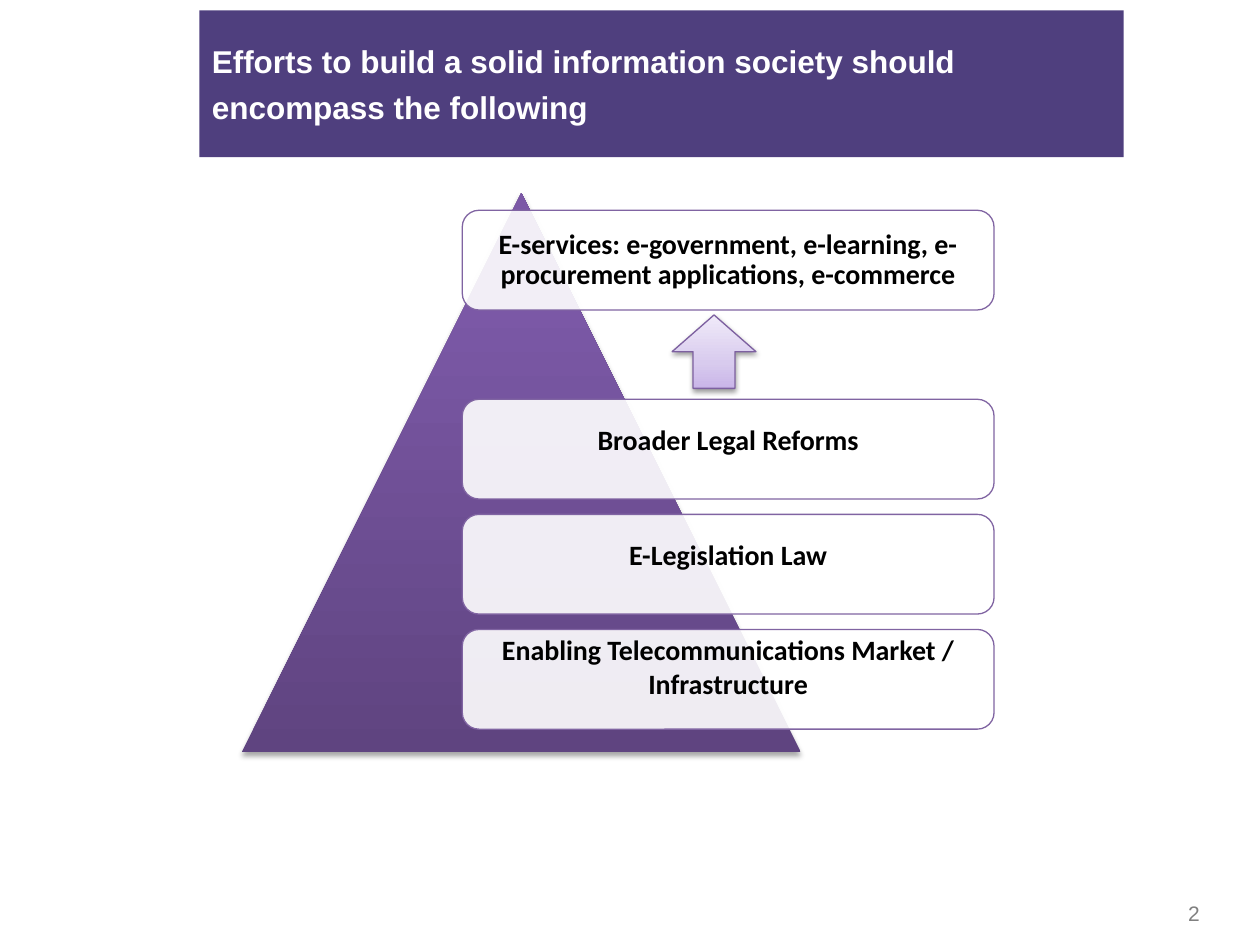
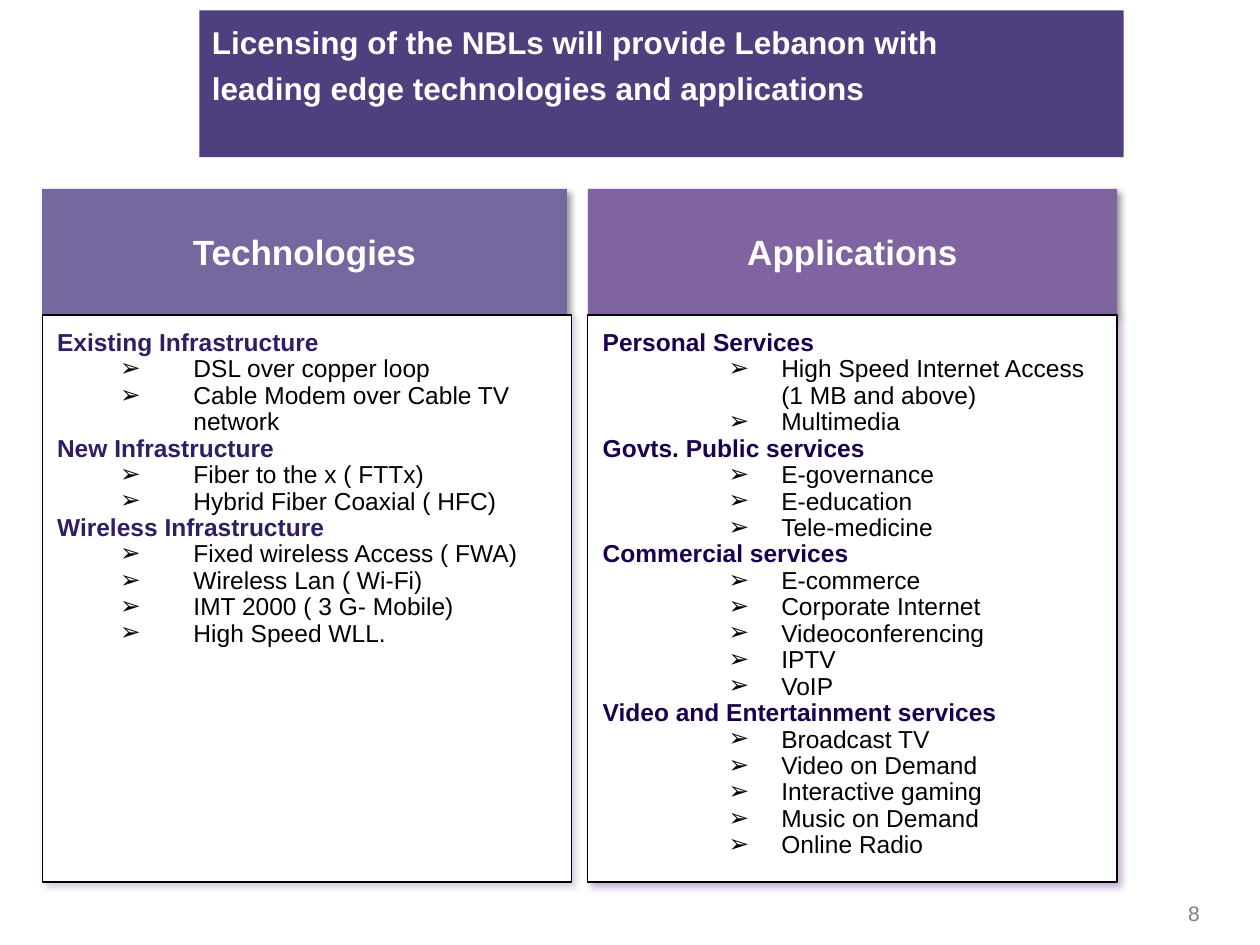
"""Build two slides on the foundations and services of an information society."""
from lxml import etree
from pptx import Presentation
from pptx.dml.color import RGBColor
from pptx.enum import shapes, text
from pptx.oxml import ns
from pptx.util import Cm, Pt

WHITE = RGBColor(0xFF, 0xFF, 0xFF)
BLACK = RGBColor(0, 0, 0)
GRAY = RGBColor(0x80, 0x80, 0x80)
BAND = RGBColor(0x4F, 0x3F, 0x7E)
VIOLET = RGBColor(0x80, 0x64, 0xA2)
ARROW_EDGE = RGBColor(0x7D, 0x60, 0xA0)
SLATE = RGBColor(0x75, 0x68, 0x9F)
SLATE_SHADOW = RGBColor(0x83, 0x81, 0xAD)
VIOLET_SHADOW = RGBColor(0x5F, 0x29, 0x87)
SLATE_HEADING = RGBColor(0x31, 0x1D, 0x63)
VIOLET_HEADING = RGBColor(0x1A, 0x00, 0x4E)
PYRAMID_STOPS = [
    (0, RGBColor(0x5F, 0x44, 0x80)),
    (80, RGBColor(0x7B, 0x58, 0xA6)),
    (100, RGBColor(0x7C, 0x57, 0xA8)),
]
ARROW_STOPS = [
    (0, RGBColor(0xC9, 0xB5, 0xE8)),
    (35, RGBColor(0xD8, 0xCB, 0xEE)),
    (100, RGBColor(0xF0, 0xEA, 0xF9)),
]

TECHNOLOGIES = [
    ("Existing Infrastructure",
     ["DSL over copper loop", "Cable Modem over Cable TV network"]),
    ("New Infrastructure",
     ["Fiber to the x ( FTTx)", "Hybrid Fiber Coaxial ( HFC)"]),
    ("Wireless Infrastructure",
     ["Fixed wireless Access ( FWA)", "Wireless Lan ( Wi-Fi)",
      "IMT 2000 ( 3 G- Mobile)", "High Speed WLL."]),
]
APPLICATIONS = [
    ("Personal Services",
     ["High Speed Internet Access (1 MB and above)", "Multimedia"]),
    ("Govts. Public services",
     ["E-governance", "E-education", "Tele-medicine"]),
    ("Commercial services",
     ["E-commerce", "Corporate Internet", "Videoconferencing", "IPTV", "VoIP"]),
    ("Video and Entertainment services",
     ["Broadcast TV", "Video on Demand", "Interactive gaming",
      "Music on Demand", "Online Radio"]),
]


def sub(parent, tag, **attrs):
    """Append a DrawingML child element and return it."""
    return etree.SubElement(parent, ns.qn(tag), {k: str(v) for k, v in attrs.items()})


def place(sp, left, top, width, height):
    """Position a shape, in centimetres."""
    sp.left, sp.top, sp.width, sp.height = Cm(left), Cm(top), Cm(width), Cm(height)


def paint(sp, fill=None, line=None):
    """Set a solid fill and a thin outline, without an inherited shadow."""
    sp.shadow.inherit = False
    if fill is not None:
        sp.fill.solid()
        sp.fill.fore_color.rgb = fill
    if line is None:
        sp.line.fill.background()
    else:
        sp.line.color.rgb = line
        sp.line.width = Pt(0.75)


def add_gradient(sp, stops):
    """Fill a shape with a gradient that runs from bottom to top."""
    sp.fill.gradient()
    sp.fill.gradient_angle = 90
    gs_list = sp.element.spPr.find(".//" + ns.qn("a:gsLst"))
    for gs in list(gs_list):
        gs_list.remove(gs)
    for pos, color in stops:
        sub(sub(gs_list, "a:gs", pos=pos * 1000), "a:srgbClr", val=color)


def add_shadow(sp, color, alpha, blur, dist, angle):
    """Add an outer shadow to a painted shape."""
    effects = sp.element.spPr.find(ns.qn("a:effectLst"))
    shadow = sub(effects, "a:outerShdw", blurRad=Pt(blur), dist=Pt(dist),
                 dir=angle * 60000, algn="tl", rotWithShape=0)
    sub(sub(shadow, "a:srgbClr", val=color), "a:alpha", val=alpha * 1000)


def add_run(p, words, size, color, bold=False, font="Arial"):
    """Add a formatted run to a paragraph."""
    r = p.add_run()
    r.text = words
    r.font.size, r.font.bold, r.font.name = Pt(size), bold, font
    r.font.color.rgb = color


def set_margins(tf, left, top, right, bottom):
    """Set the insets of a text frame, in centimetres, and wrap its text."""
    tf.word_wrap = True
    tf.auto_size = text.MSO_AUTO_SIZE.NONE
    tf.margin_left, tf.margin_top = Cm(left), Cm(top)
    tf.margin_right, tf.margin_bottom = Cm(right), Cm(bottom)


def add_title(s, lines, bottom=0.13):
    """Format the title placeholder as the purple band."""
    sp = s.shapes.title
    place(sp, 4.02, 0.21, 18.63, 2.96)
    paint(sp, BAND)
    tf = sp.text_frame
    set_margins(tf, 0.25, 0.13, 0.25, bottom)
    tf.vertical_anchor = text.MSO_ANCHOR.MIDDLE
    for i, line in enumerate(lines):
        p = tf.add_paragraph() if i else tf.paragraphs[0]
        p.alignment = text.PP_ALIGN.LEFT
        p.space_before = Pt(4.5 if i else 0)
        add_run(p, line, 18, WHITE, True)


def add_page_number(s, number):
    """Write the page number in the lower right corner."""
    sp = s.shapes.add_textbox(Cm(23.7), Cm(18.03), Cm(1.04), Cm(0.77))
    add_run(sp.text_frame.paragraphs[0], str(number), 12, GRAY)


def add_preset(s, kind, box, fill=None, line=None):
    """Add a painted preset shape."""
    sp = s.shapes.add_shape(kind, *(Cm(v) for v in box))
    paint(sp, fill, line)
    return sp


def add_layer(s, top, words, bottom=0.0, spacing=1.0):
    """Add one translucent label across the pyramid."""
    sp = add_preset(s, shapes.MSO_SHAPE.ROUNDED_RECTANGLE,
                    (9.32, top, 10.72, 2.01), WHITE, VIOLET)
    color = sp.element.spPr.find(ns.qn("a:solidFill"))[0]
    sub(color, "a:alpha", val=90000)
    tf = sp.text_frame
    set_margins(tf, 0.43, 0, 0.43, bottom)
    tf.vertical_anchor = text.MSO_ANCHOR.MIDDLE
    p = tf.paragraphs[0]
    p.alignment = text.PP_ALIGN.CENTER
    p.line_spacing = spacing
    add_run(p, words, 16, BLACK, True, "Calibri")


def add_list_line(tf, words, first, heading_color=None, level=0, indent=(0, 0)):
    """Add a heading, or an arrow-bulleted item when no heading colour is given."""
    p = tf.paragraphs[0] if first else tf.add_paragraph()
    p.level = level
    pPr = p._p.get_or_add_pPr()
    pPr.set("marL", str(Cm(indent[0])))
    pPr.set("indent", str(Cm(indent[1])))
    if heading_color is None:
        sub(pPr, "a:buChar", char="➢")
    else:
        sub(pPr, "a:buNone")
    p.space_before = Pt(0)
    p.line_spacing = Pt(15.1)
    add_run(p, words, 14, heading_color or BLACK, heading_color is not None)


def add_column(s, body, left, header, groups, colors, level, indent):
    """Add a header block above a framed list in a body placeholder."""
    fill, heading_color, shadow_color = colors
    title, header_width = header
    place(body, left, 6.35, 10.67, 11.43)
    paint(body, WHITE, BLACK)
    add_shadow(body, shadow_color, 40, 4, 3, 45)
    set_margins(body.text_frame, 0.3, 0.3, 0.41, 0.43)
    for i, (heading, items) in enumerate(groups):
        add_list_line(body.text_frame, heading, i == 0, heading_color)
        for item in items:
            add_list_line(body.text_frame, item, False, level=level, indent=indent)

    sp = add_preset(s, shapes.MSO_SHAPE.RECTANGLE, (left, 3.81, header_width, 2.54), fill)
    add_shadow(sp, BLACK, 40, 4, 3, 45)
    sp.text_frame.vertical_anchor = text.MSO_ANCHOR.MIDDLE
    p = sp.text_frame.paragraphs[0]
    p.alignment = text.PP_ALIGN.CENTER
    add_run(p, title, 20, WHITE, True)
    body.element.addprevious(sp.element)


def build_pyramid_slide(prs):
    """Build the slide with the layers of the information society."""
    s = prs.slides.add_slide(prs.slide_layouts[5])
    add_title(s, ["Efforts to build a solid information society should",
                  "encompass the following"])
    pyramid = add_preset(s, shapes.MSO_SHAPE.ISOSCELES_TRIANGLE, (4.87, 3.89, 11.28, 11.28))
    add_gradient(pyramid, PYRAMID_STOPS)
    add_shadow(pyramid, BLACK, 35, 3.1, 1.8, 90)
    add_layer(s, 4.24, "E-services: e-government, e-learning, e-procurement "
              "applications, e-commerce", spacing=0.9)
    foundations = [
        ("Broader Legal Reforms", 0.4),
        ("E-Legislation Law", 0.4),
        ("Enabling Telecommunications Market / Infrastructure", 0.52),
    ]
    for i, (words, bottom) in enumerate(foundations):
        add_layer(s, 8.05 + 2.32 * i, words, bottom)
    arrow = add_preset(s, shapes.MSO_SHAPE.UP_ARROW, (13.55, 6.35, 1.69, 1.48),
                       line=ARROW_EDGE)
    add_gradient(arrow, ARROW_STOPS)
    add_shadow(arrow, BLACK, 38, 3.1, 1.6, 90)
    add_page_number(s, 2)


def build_licensing_slide(prs):
    """Build the slide with the technologies and applications lists."""
    s = prs.slides.add_slide(prs.slide_layouts[3])
    add_title(s, ["Licensing of the NBLs will provide Lebanon with",
                  "leading edge technologies and applications"], bottom=0.9)
    add_column(s, s.placeholders[2], 11.85, ("Applications", 10.67), APPLICATIONS,
               (VIOLET, VIOLET_HEADING, VIOLET_SHADOW), 2, (3.6, -1.06))
    add_column(s, s.placeholders[1], 0.85, ("Technologies", 10.58), TECHNOLOGIES,
               (SLATE, SLATE_HEADING, SLATE_SHADOW), 1, (2.75, -1.48))
    add_page_number(s, 8)


def main():
    """Create and save the presentation."""
    prs = Presentation()
    prs.slide_width, prs.slide_height = Cm(25.4), Cm(19.05)
    build_pyramid_slide(prs)
    build_licensing_slide(prs)
    prs.save("out.pptx")


if __name__ == "__main__":
    main()
